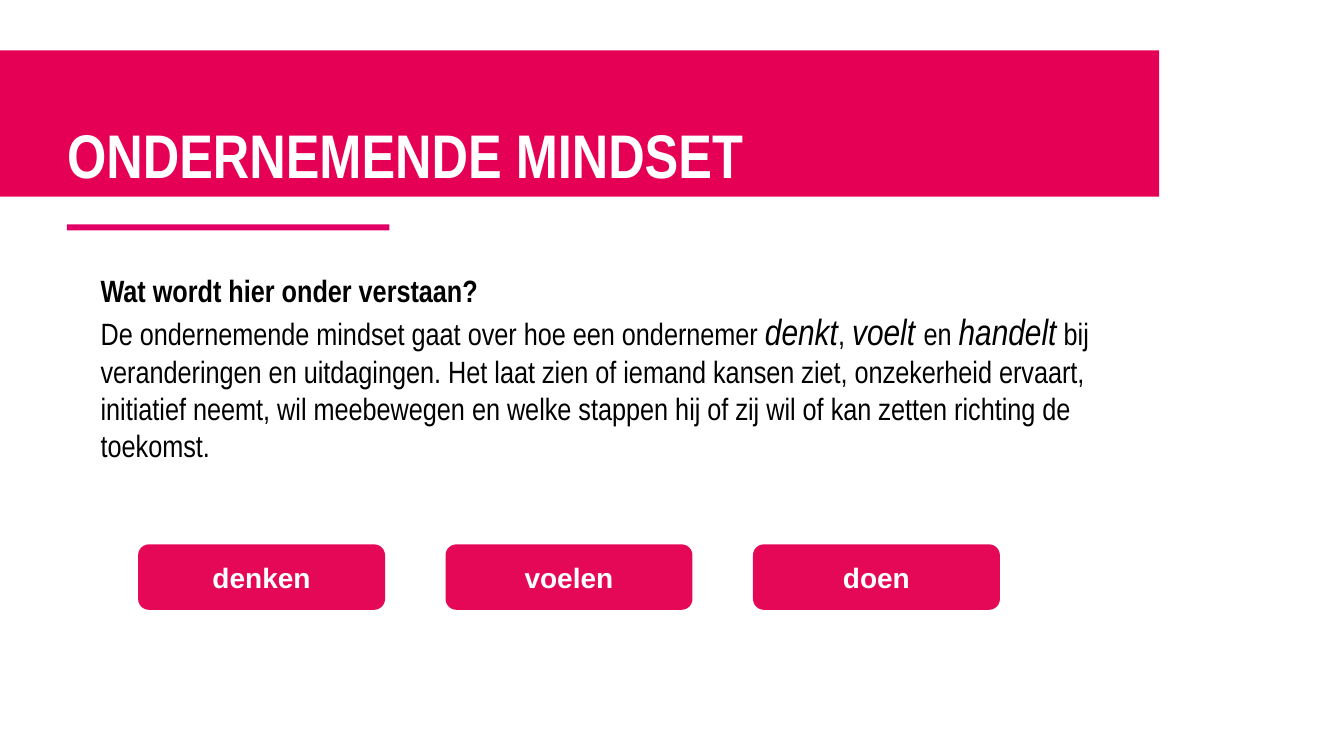
import pptx
import pptx.dml.color
import pptx.enum.shapes
import pptx.enum.text
import pptx.util

Pt = pptx.util.Pt
SHAPE = pptx.enum.shapes.MSO_SHAPE
ANCHOR = pptx.enum.text.MSO_ANCHOR
ALIGN = pptx.enum.text.PP_ALIGN

COLORS = {
    "banner": "E50056",
    "button": "E50856",
    "rule": "E20066",
    "white": "FFFFFF",
    "black": "000000",
}


class SlideBuilder:
    heading_font = "Arial Narrow"
    button_font = "Arial"

    def __init__(self, slide):
        self.s = slide

    def color(self, name):
        return pptx.dml.color.RGBColor.from_string(COLORS[name])

    def style(self, p, font, size, color, bold=False):
        p.font.name = font
        p.font.size = Pt(size)
        p.font.bold = bold
        p.font.color.rgb = self.color(color)

    def block(self, kind, x, y, w, h, fill):
        sp = self.s.shapes.add_shape(kind, Pt(x), Pt(y), Pt(w), Pt(h))
        sp.shadow.inherit = False
        sp.fill.solid()
        sp.fill.fore_color.rgb = self.color(fill)
        sp.line.fill.background()
        return sp

    def banner(self, text, x, y, w, h, indent):
        tf = self.block(SHAPE.RECTANGLE, x, y, w, h, "banner").text_frame
        tf.margin_left = Pt(indent)
        tf.vertical_anchor = ANCHOR.BOTTOM
        p = tf.paragraphs[0]
        p.text = text
        p.alignment = ALIGN.LEFT
        p.line_spacing = 0.9
        self.style(p, self.heading_font, 44, "white", bold=True)

    def rule(self, x, y, w, h):
        self.block(SHAPE.RECTANGLE, x, y, w, h, "rule")

    def explanation(self, question, answer, x, y, w, h):
        tf = self.s.shapes.add_textbox(Pt(x), Pt(y), Pt(w), Pt(h)).text_frame
        tf.word_wrap = True
        p = tf.paragraphs[0]
        p.text = question
        self.style(p, self.heading_font, 22, "black", bold=True)
        p = tf.add_paragraph()
        self.style(p, self.heading_font, 22, "black")
        for text, emphasized in answer:
            r = p.add_run()
            r.text = text
            if emphasized:
                r.font.size = Pt(26)
                r.font.italic = True

    def button(self, text, x, y, w, h):
        tf = self.block(SHAPE.ROUNDED_RECTANGLE, x, y, w, h, "button").text_frame
        tf.vertical_anchor = ANCHOR.MIDDLE
        p = tf.paragraphs[0]
        p.text = text
        p.alignment = ALIGN.CENTER
        self.style(p, self.button_font, 20, "white", bold=True)


def main():
    prs = pptx.Presentation()
    prs.slide_width = Pt(960)
    prs.slide_height = Pt(540)
    page = SlideBuilder(prs.slides.add_slide(prs.slide_layouts[6]))

    page.banner("ONDERNEMENDE MINDSET", 0, 36, 828, 104.4, indent=48)
    page.explanation(
        "Wat wordt hier onder verstaan?",
        [
            ("De ondernemende mindset gaat over hoe een ondernemer ", False),
            ("denkt", True),
            (", ", False),
            ("voelt ", True),
            ("en ", False),
            ("handelt", True),
            (" bij veranderingen en uitdagingen. Het laat zien of iemand kansen "
             "ziet, onzekerheid ervaart, initiatief neemt, wil meebewegen en welke "
             "stappen hij of zij wil of kan zetten richting de toekomst.", False),
        ],
        64.8, 190.8, 724.3, 172.8,
    )
    for i, label in enumerate(["denken", "voelen", "doen"]):
        page.button(label, 98.64 + i * 219.6, 388.8, 176.4, 46.8)
    page.rule(47.8, 160.3, 230.4, 4.3)

    prs.save("out.pptx")


if __name__ == "__main__":
    main()
